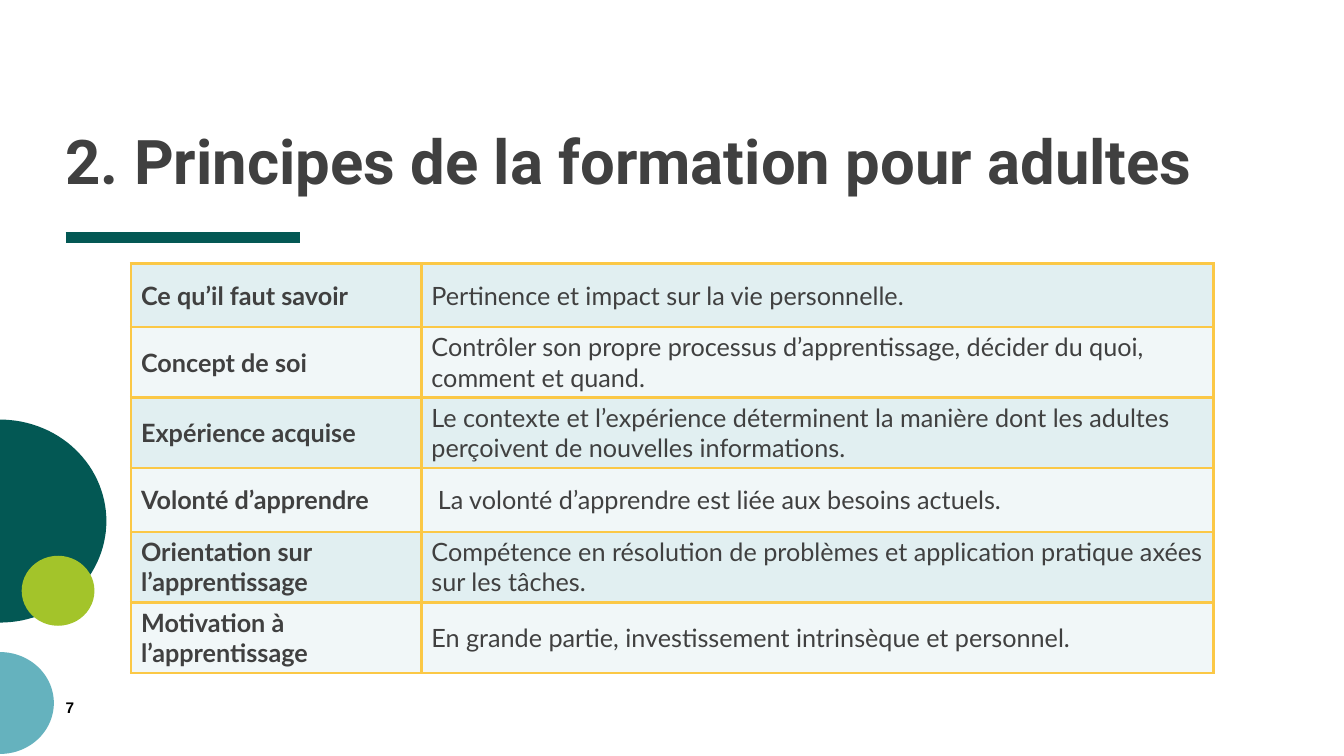
from math import cos, pi, sin

from lxml.etree import SubElement
from pptx import Presentation
from pptx.dml.color import RGBColor
from pptx.enum.shapes import MSO_CONNECTOR, MSO_SHAPE
from pptx.enum.text import MSO_ANCHOR, MSO_AUTO_SIZE, PP_ALIGN
from pptx.oxml.ns import qn
from pptx.util import Pt

COLORS = {
    "text": "404040", "number": "000000", "green": "035854", "blue": "65B2BE",
    "lime": "A3C42A", "border": "FBC846", "odd row": "E1EFF1", "even row": "F1F7F8",
}
PRINCIPLES = [
    ("Ce qu’il faut savoir", "Pertinence et impact sur la vie personnelle."),
    ("Concept de soi",
     "Contrôler son propre processus d’apprentissage, décider du quoi, comment et quand."),
    ("Expérience acquise",
     "Le contexte et l’expérience déterminent la manière dont les adultes "
     "perçoivent de nouvelles informations."),
    ("Volonté d’apprendre", " La volonté d’apprendre est liée aux besoins actuels."),
    ("Orientation sur l’apprentissage",
     "Compétence en résolution de problèmes et application pratique axées sur les tâches."),
    ("Motivation à l’apprentissage",
     "En grande partie, investissement intrinsèque et personnel."),
]
ROW_HEIGHTS = [45.4, 45.4, 45.4, 45.4, 47.5, 45.4]


def style_font(font, name, size, bold, color):
    font.name, font.size, font.bold = name, Pt(size), bold
    font.color.rgb = RGBColor.from_string(COLORS[color])


def paint(shape, color):
    """Give a shape a flat fill with no outline or shadow."""
    shape.shadow.inherit = False
    shape.fill.solid()
    shape.fill.fore_color.rgb = RGBColor.from_string(COLORS[color])
    shape.line.fill.background()


deck = Presentation()
deck.slide_width, deck.slide_height = Pt(960), Pt(540)
page = deck.slides.add_slide(deck.slide_layouts[5])

# Decoration: half discs on the left edge, a small disc and the title rule
for center_y, radius_x, radius_y, color in [(372.2, 76, 72.5, "green"), (502.2, 38.5, 36.4, "blue")]:
    angles = [-pi / 2 + pi * step / 60 for step in range(61)]
    arc = [(Pt(radius_x * cos(angle)), Pt(center_y + radius_y * sin(angle))) for angle in angles]
    outline = page.shapes.build_freeform(*arc[0])
    outline.add_line_segments(arc[1:], close=True)
    paint(outline.convert_to_shape(), color)

disc = page.shapes.add_shape(MSO_SHAPE.OVAL, Pt(15.5), Pt(397), Pt(52), Pt(50))
paint(disc, "lime")

rule = page.shapes.add_connector(MSO_CONNECTOR.STRAIGHT, Pt(46.8), Pt(169.4), Pt(214.6), Pt(169.4))
rule.line.width = Pt(8)
rule.line.color.rgb = RGBColor.from_string(COLORS["green"])
SubElement(rule._element.spPr, qn("a:effectLst"))

# Title and page number
title = page.shapes.title
title.left, title.top, title.width, title.height = Pt(46.8), Pt(8), Pt(856), Pt(132.5)
title.text_frame.text = "2. Principes de la formation pour adultes"
number = page.shapes.add_textbox(Pt(46.8), Pt(498.5), Pt(10), Pt(13))
number.text_frame.text = "7"
for box, anchor, font_style in [
    (title, MSO_ANCHOR.BOTTOM, ("Roboto", 44, True, "text")),
    (number, MSO_ANCHOR.TOP, ("Arial", 11, True, "number")),
]:
    frame = box.text_frame
    frame.margin_left = frame.margin_top = frame.margin_right = frame.margin_bottom = 0
    frame.auto_size = MSO_AUTO_SIZE.NONE
    frame.vertical_anchor = anchor
    para = frame.paragraphs[0]
    para.alignment = PP_ALIGN.LEFT
    style_font(para.font, *font_style)
title.text_frame.word_wrap = True
title.text_frame.paragraphs[0].line_spacing = 0.8

# Table of principles
table = page.shapes.add_table(
    len(PRINCIPLES), 2, Pt(93.6), Pt(188.2), Pt(773.3), Pt(sum(ROW_HEIGHTS))).table
table.first_row = table.horz_banding = False
table.columns[0].width, table.columns[1].width = Pt(207.4), Pt(565.9)
for row, (texts, height) in enumerate(zip(PRINCIPLES, ROW_HEIGHTS)):
    table.rows[row].height = Pt(height)
    for column, text in enumerate(texts):
        cell = table.cell(row, column)
        cell.text = text
        cell.vertical_anchor = MSO_ANCHOR.MIDDLE
        style_font(cell.text_frame.paragraphs[0].font, "Lato", 18, column == 0, "text")
        properties = cell._tc.get_or_add_tcPr()
        for side in ("a:lnL", "a:lnR", "a:lnT", "a:lnB"):
            border = SubElement(properties, qn(side), w=str(Pt(2)))
            SubElement(SubElement(border, qn("a:solidFill")), qn("a:srgbClr"), val=COLORS["border"])
        cell.fill.solid()
        band = "even row" if row % 2 else "odd row"
        cell.fill.fore_color.rgb = RGBColor.from_string(COLORS[band])

deck.save("out.pptx")
